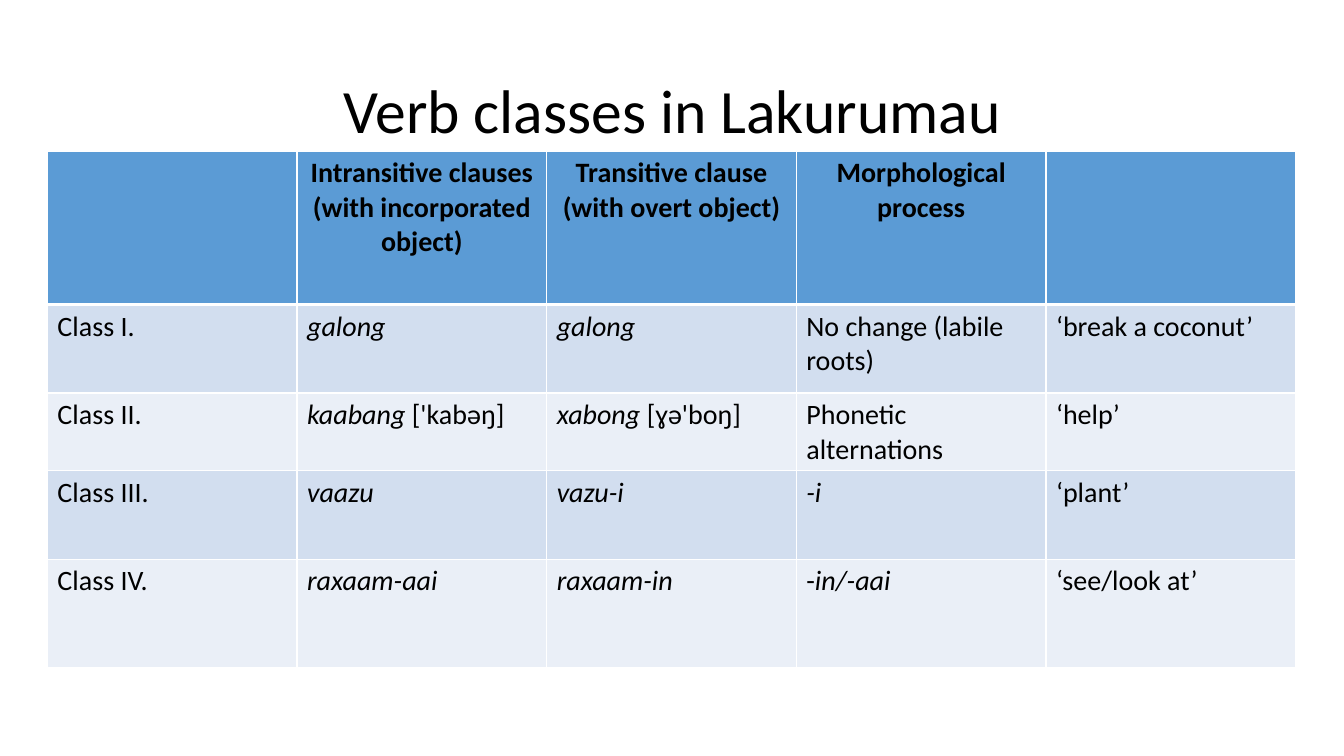
from lxml import etree
from pptx import Presentation
from pptx.dml.color import RGBColor
from pptx.enum.text import MSO_ANCHOR, PP_ALIGN
from pptx.oxml.ns import qn
from pptx.util import Inches, Pt

CENTER, LEFT = PP_ALIGN.CENTER, PP_ALIGN.LEFT
MIDDLE = MSO_ANCHOR.MIDDLE

# Content: text between asterisks is italic, a line break starts a paragraph
TITLE = "Verb classes in Lakurumau"
ROWS = [
    ["", "Intransitive clauses\n(with incorporated object)",
     "Transitive clause\n(with overt object)", "Morphological process", ""],
    ["Class I.", "*galong*", "*galong*", "No change (labile roots)",
     "‘break a coconut’"],
    ["Class II.", "*kaabang *['kabəŋ]", "*xabong *[ɣə'boŋ]",
     "Phonetic alternations", "‘help’"],
    ["Class III.", "*vaazu*", "*vazu-i*", "*-i*", "‘plant’"],
    ["Class IV.", "*raxaam-aai*", "*raxaam-in*", "-*in/-aai*",
     "‘see/look at’"],
]
HEIGHTS = [1.52, 0.88, 0.76, 0.88, 1.08]
GRID = (0.47, 1.5, 12.38)
HEAD = (0.92, 0.4, 11.5, 1.45)
FONT = "Calibri"
COLORS = {"head": "5B9BD5", "odd": "D2DEEF", "even": "EAEFF7",
          "line": "FFFFFF", "text": "000000"}


def write(par, text, size, align, bold=False):
    par.alignment = align
    for n, part in enumerate(text.split("*")):
        if part:
            run = par.add_run()
            run.text = part
            font = run.font
            font.name, font.size = FONT, Pt(size)
            font.bold, font.italic = bold, n % 2 == 1
            font.color.rgb = RGBColor.from_string(COLORS["text"])


def border(cell, widths):
    props = cell._tc.get_or_add_tcPr()
    for n, (side, width) in enumerate(widths.items()):
        line = etree.Element(qn("a:ln" + side), w=str(Pt(width)))
        fill = etree.SubElement(line, qn("a:solidFill"))
        etree.SubElement(fill, qn("a:srgbClr"), val=COLORS["line"])
        props.insert(n, line)


def main():
    deck = Presentation()
    deck.slide_width, deck.slide_height = Inches(13.33), Inches(7.5)
    slide = deck.slides.add_slide(deck.slide_layouts[6])

    # Title
    frame = slide.shapes.add_textbox(*map(Inches, HEAD)).text_frame
    frame.word_wrap = True
    frame.vertical_anchor = MIDDLE
    frame.paragraphs[0].line_spacing = 0.9
    write(frame.paragraphs[0], TITLE, 44, CENTER)

    # Table with equal columns
    left, top, width = GRID
    cols = len(ROWS[0])
    table = slide.shapes.add_table(
        len(ROWS), cols, Inches(left), Inches(top),
        Inches(width), Inches(sum(HEIGHTS))).table
    for col in table.columns:
        col.width = Inches(width / cols)
    for row, height in zip(table.rows, HEIGHTS):
        row.height = Inches(height)

    # Cells
    for r, texts in enumerate(ROWS):
        first = r == 0
        tone = "head" if first else "odd" if r % 2 else "even"
        for c, text in enumerate(texts):
            cell = table.cell(r, c)
            cell.fill.solid()
            cell.fill.fore_color.rgb = RGBColor.from_string(COLORS[tone])
            border(cell, {"L": 1, "R": 1, "T": 3 if r == 1 else 1,
                          "B": 3 if first else 1})
            body = cell.text_frame
            for n, line in enumerate(text.split("\n")):
                par = body.add_paragraph() if n else body.paragraphs[0]
                write(par, line, 20, CENTER if first else LEFT, first)

    deck.save("out.pptx")


if __name__ == "__main__":
    main()
